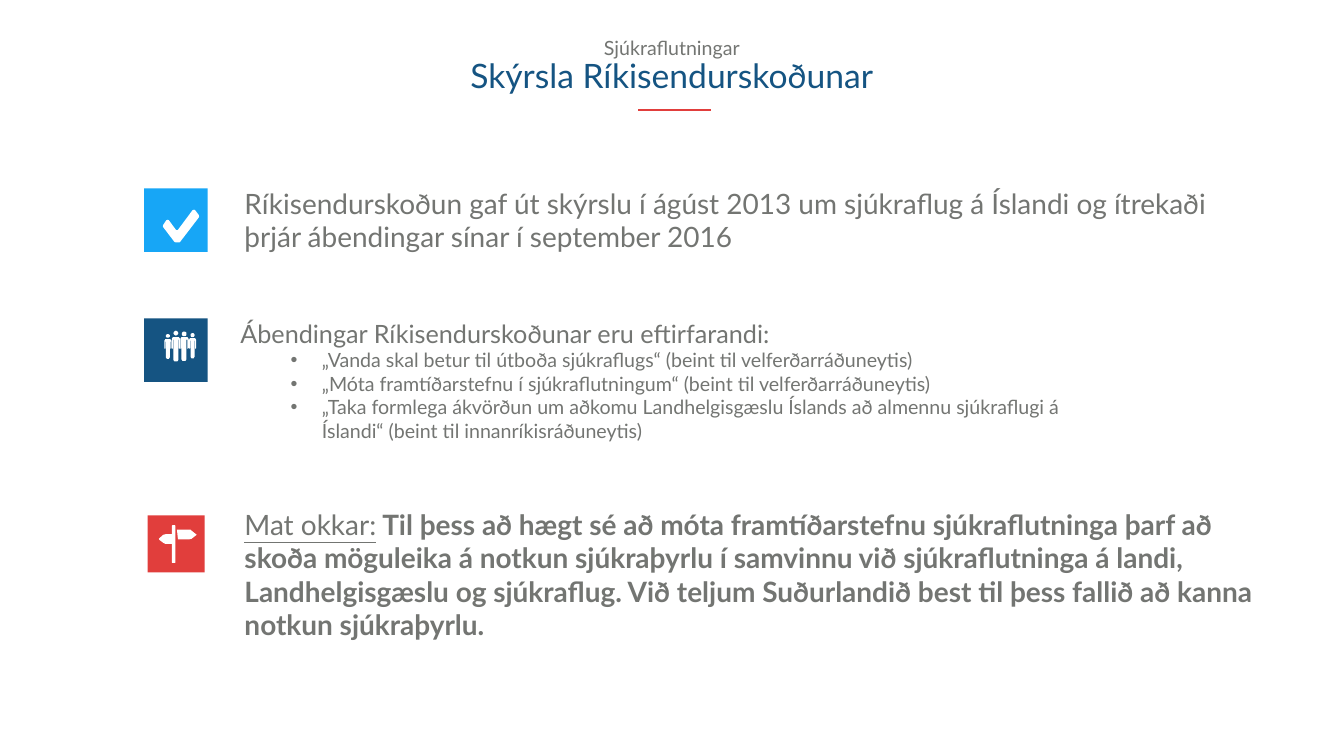
from math import cos, pi, sin

from lxml import etree
from pptx import Presentation
from pptx.dml.color import RGBColor
from pptx.enum.shapes import MSO_CONNECTOR, MSO_SHAPE
from pptx.enum.text import MSO_AUTO_SIZE, PP_ALIGN
from pptx.oxml.ns import qn
from pptx.util import Cm, Pt

RECTANGLE = MSO_SHAPE.RECTANGLE
STRAIGHT = MSO_CONNECTOR.STRAIGHT
FIT_SHAPE = MSO_AUTO_SIZE.SHAPE_TO_FIT_TEXT
CENTER = PP_ALIGN.CENTER
FONT = "Lato"
COLORS = {"navy": "155482", "sky": "17A6F6", "red": "E13E3C",
          "gray": "737572", "white": "FFFFFF"}
OUTLINE_UNIT = Cm(2.54) // 100


def add_text(left, top, width, height, paragraphs, wrap=True):
    box = page.shapes.add_textbox(Cm(left), Cm(top), Cm(width), Cm(height))
    frame = box.text_frame
    frame.word_wrap = wrap
    frame.auto_size = FIT_SHAPE
    frame.text = "\n".join(text for text, size, color in paragraphs)
    for para, (text, size, color) in zip(frame.paragraphs, paragraphs):
        for span in para.runs:
            span.font.name = FONT
            span.font.size = Pt(size)
            span.font.color.rgb = RGBColor.from_string(COLORS[color])
    return frame


def paint(shape, color):
    shape.shadow.inherit = False
    shape.fill.solid()
    shape.fill.fore_color.rgb = RGBColor.from_string(COLORS[color])
    shape.line.fill.background()


deck = Presentation()
deck.slide_width = Cm(67.72)
deck.slide_height = Cm(38.1)
page = deck.slides.add_slide(deck.slide_layouts[6])

for left, top, side, color in [(7.26, 16.05, 3.2, "navy"),
                               (7.26, 9.5, 3.2, "sky"),
                               (7.44, 25.98, 2.87, "red")]:
    tile = page.shapes.add_shape(RECTANGLE, Cm(left), Cm(top), Cm(side), Cm(side))
    paint(tile, color)

check = [(349, 481), (346, 480), (324, 451), (323, 449), (324, 446), (330, 437),
         (333, 436), (335, 437), (349, 456), (351, 457), (353, 456), (382, 417),
         (385, 416), (387, 417), (394, 426), (395, 429), (394, 432), (358, 479),
         (356, 481), (353, 481)]
post_and_left_sign = [(347, 1042), (342, 1042), (341, 1043), (341, 1060),
                      (328, 1060), (324, 1061), (316, 1068), (315, 1069),
                      (316, 1071), (324, 1077), (328, 1079), (341, 1079),
                      (341, 1116), (342, 1117), (347, 1117), (348, 1116),
                      (348, 1043)]
right_sign = [(389, 1060), (380, 1053), (378, 1051), (351, 1051), (353, 1070),
              (376, 1070), (380, 1069), (389, 1062), (390, 1061)]

people = []
for center, head, shoulder, foot, half in [(333, 666.5, 673, 712, 4),
                                           (349, 661, 669, 717, 5),
                                           (365.5, 662.5, 669, 716, 5),
                                           (382, 665, 671, 711, 4)]:
    radius = half - 0.2
    people.append([(center + radius * cos(step * pi / 8),
                    head + radius * sin(step * pi / 8)) for step in range(16)])
    right_side = [(half + 1, shoulder), (half + 3, shoulder + 3),
                  (half + 3, 691), (half + 2, 692), (half + 1, 691),
                  (half + 1, shoulder + 5), (half, shoulder + 5),
                  (half, foot - 3), (half - 2, foot)]
    people.append([(center + x, y) for x, y in right_side]
                  + [(center - x, y) for x, y in reversed(right_side)])

for contours in [[check], [post_and_left_sign, right_sign], people]:
    builder = page.shapes.build_freeform(*contours[0][0], scale=OUTLINE_UNIT)
    builder.add_line_segments(contours[0][1:])
    for contour in contours[1:]:
        builder.move_to(*contour[0])
        builder.add_line_segments(contour[1:])
    paint(builder.convert_to_shape(), "white")

add_text(12.07, 9.27, 49.78, 3.68, [
    ("Ríkisendurskoðun gaf út skýrslu í ágúst 2013 um sjúkraflug á Íslandi og "
     "ítrekaði þrjár ábendingar sínar í september 2016", 40, "gray")])

advice = add_text(11.86, 15.9, 43.99, 6.58, [
    ("Ábendingar Ríkisendurskoðunar eru eftirfarandi:", 36, "gray"),
    ("„Vanda skal betur til útboða sjúkraflugs“ (beint til velferðarráðuneytis)",
     28, "gray"),
    ("„Móta framtíðarstefnu í sjúkraflutningum“ (beint til velferðarráðuneytis)",
     28, "gray"),
    ("„Taka formlega ákvörðun um aðkomu Landhelgisgæslu Íslands að almennu "
     "sjúkraflugi á Íslandi“ (beint til innanríkisráðuneytis)", 28, "gray")])
for para in advice.paragraphs[1:]:
    para.level = 1
    properties = para._p.get_or_add_pPr()
    properties.set("marL", str(Cm(4.11)))
    properties.set("indent", str(-Cm(1.57)))
    etree.SubElement(properties, qn("a:buFont")).set("typeface", "Arial")
    etree.SubElement(properties, qn("a:buChar")).set("char", "•")

opinion = add_text(12.07, 25.43, 52.68, 7.09, [("Mat okkar:", 40, "gray")])
opinion.paragraphs[0].runs[0].font.underline = True
span = opinion.paragraphs[0].add_run()
span.text = (" Til þess að hægt sé að móta framtíðarstefnu sjúkraflutninga þarf að "
             "skoða möguleika á notkun sjúkraþyrlu í samvinnu við sjúkraflutninga "
             "á landi, Landhelgisgæslu og sjúkraflug. Við teljum Suðurlandið best "
             "til þess fallið að kanna notkun sjúkraþyrlu.")
span.font.name = FONT
span.font.size = Pt(40)
span.font.bold = True
span.font.color.rgb = RGBColor.from_string(COLORS["gray"])

title = add_text(22.94, 1.83, 21.82, 3.2, [
    ("Sjúkraflutningar", 28, "gray"),
    ("Skýrsla Ríkisendurskoðunar", 48, "navy")], wrap=False)
for para in title.paragraphs:
    para.alignment = CENTER
    para.line_spacing = 0.9

underline = page.shapes.add_connector(STRAIGHT, Cm(35.81), Cm(5.54), Cm(32.16), Cm(5.54))
underline.line.color.rgb = RGBColor.from_string(COLORS["red"])
underline.line.width = Pt(3)
etree.SubElement(underline._element.spPr, qn("a:effectLst"))

deck.save("out.pptx")
